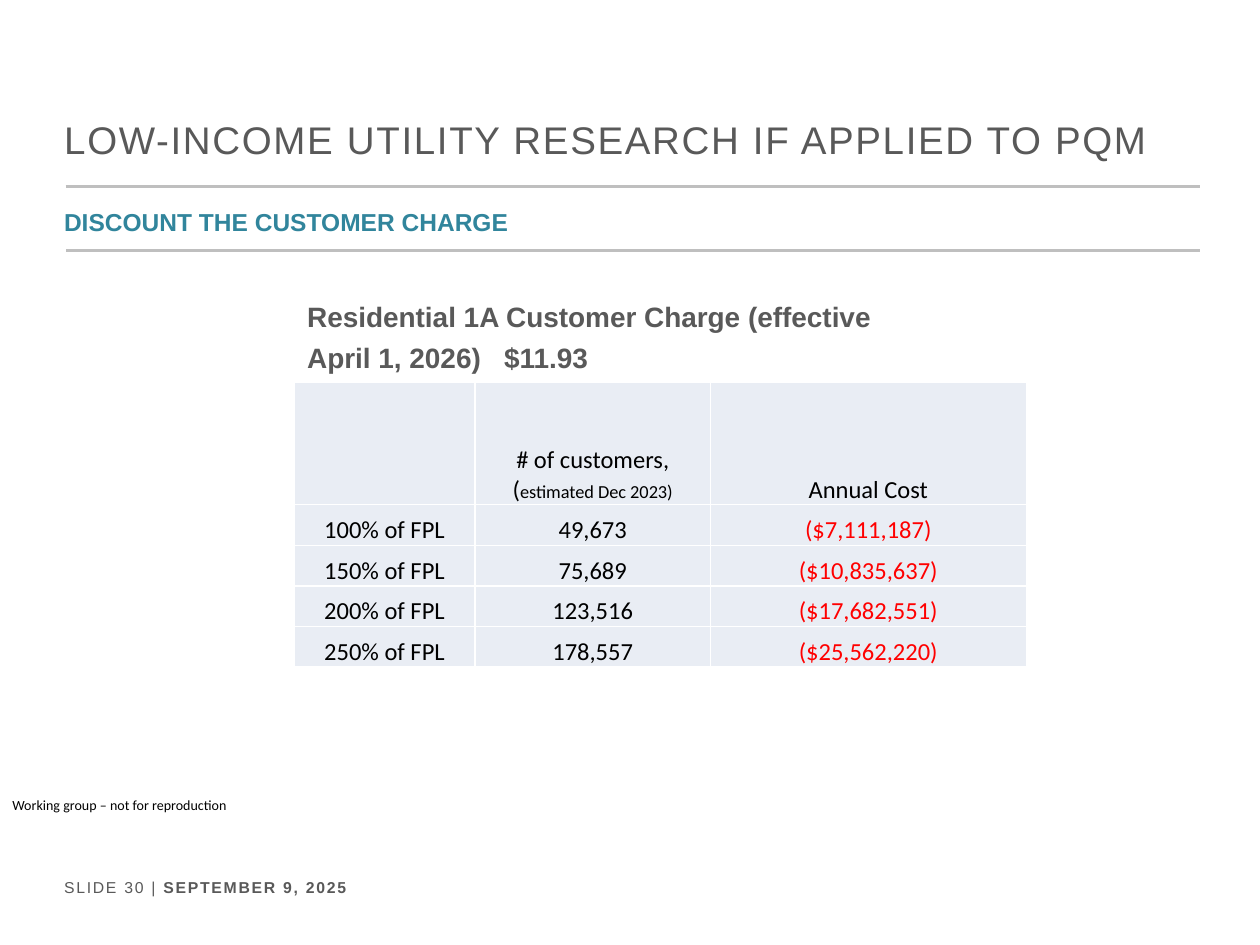
"""Build a slide on the cost of discounting the customer charge."""
from dataclasses import dataclass

from lxml.etree import SubElement
from pptx import Presentation
from pptx.dml.color import RGBColor
from pptx.enum.shapes import MSO_CONNECTOR
from pptx.enum.text import MSO_ANCHOR, MSO_AUTO_SIZE, PP_ALIGN
from pptx.oxml.ns import qn
from pptx.util import Pt

LINE = MSO_CONNECTOR.STRAIGHT
TOP, MIDDLE, BOTTOM = MSO_ANCHOR.TOP, MSO_ANCHOR.MIDDLE, MSO_ANCHOR.BOTTOM
NO_FIT = MSO_AUTO_SIZE.NONE
LEFT, CENTER = PP_ALIGN.LEFT, PP_ALIGN.CENTER

GRAY = RGBColor(0x59, 0x59, 0x59)
RULE = RGBColor(0xBF, 0xBF, 0xBF)
TEAL = RGBColor(0x31, 0x85, 0x9C)
BLACK = RGBColor(0, 0, 0)
RED = RGBColor(0xFF, 0, 0)
PALE = RGBColor(0xE9, 0xED, 0xF4)

HEADS = ["", "# of customers, (", "Annual Cost"]
ROWS = [
    ["100% of FPL", "49,673", "($7,111,187)"],
    ["150% of FPL", "75,689", "($10,835,637)"],
    ["200% of FPL", "123,516", "($17,682,551)"],
    ["250% of FPL", "178,557", "($25,562,220)"],
]
WIDTHS = [103.5, 134.5, 180.5]
HEAD, ROW = 70, 23.2


@dataclass
class Label:
    text: str
    left: float
    top: float
    width: float
    height: float
    size: float
    color: RGBColor = GRAY
    face: str = "Arial"
    bold: bool = False
    anchor: MSO_ANCHOR = TOP
    space: float = 1


TITLE = Label("LOW-INCOME UTILITY RESEARCH IF APPLIED TO PQM",
              29.5, 58.3, 656, 42, 22, anchor=MIDDLE)
FOOT = Label("SLIDE 30 | ", 29.5, 498.2, 193, 18, 9)
LABELS = [
    Label("DISCOUNT THE CUSTOMER CHARGE", 29.5, 108, 655, 34, 14,
          TEAL, bold=True, anchor=MIDDLE, space=1.2),
    Label("Residential 1A Customer Charge (effective April 1, 2026)\t$11.93",
          168.5, 164, 366, 54, 16, bold=True, space=1.2),
    Label("Working group – not for reproduction", 0, 451.4, 138, 17, 8,
          BLACK, "Calibri"),
]


def style(para, face: str, size: float, color: RGBColor, bold: bool = False) -> None:
    font = para.font
    font.name, font.size, font.bold = face, Pt(size), bold
    font.color.rgb = color


def write(shape, label: Label):
    shape.left, shape.top = Pt(label.left), Pt(label.top)
    shape.width, shape.height = Pt(label.width), Pt(label.height)
    frame = shape.text_frame
    frame.word_wrap, frame.auto_size = True, NO_FIT
    frame.vertical_anchor = label.anchor
    para = frame.paragraphs[0]
    para.add_run().text = label.text
    para.alignment, para.line_spacing = LEFT, label.space
    if "\t" in label.text:
        tabs = SubElement(para._p.get_or_add_pPr(), qn("a:tabLst"))
        SubElement(tabs, qn("a:tab"), pos=str(Pt(112.5)), algn="l")
    style(para, label.face, label.size, label.color, label.bold)
    return para


def add_label(slide, label: Label):
    return write(slide.shapes.add_textbox(0, 0, 0, 0), label)


def track(para) -> None:
    for run in para.runs:
        run.font._element.set("spc", "100")


def add_rule(slide, left: float, top: float) -> None:
    rule = slide.shapes.add_connector(LINE, Pt(left), Pt(top), Pt(left + 648), Pt(top))
    rule.line.color.rgb, rule.line.width = RULE, Pt(1.5)
    SubElement(rule._element.spPr, qn("a:effectLst"))


def add_edges(cell) -> None:
    props = cell._tc.get_or_add_tcPr()
    for place, side in enumerate(("lnL", "lnR", "lnT", "lnB")):
        edge = SubElement(props, qn(f"a:{side}"), w=str(Pt(1)))
        SubElement(SubElement(edge, qn("a:solidFill")), qn("a:srgbClr"), val="FFFFFF")
        props.insert(place, edge)


def fill_cell(cell, text: str, color: RGBColor) -> None:
    cell.fill.solid()
    cell.fill.fore_color.rgb = PALE
    add_edges(cell)
    cell.vertical_anchor = BOTTOM
    cell.margin_left = cell.margin_right = cell.margin_top = Pt(0.7)
    cell.margin_bottom = 0
    para = cell.text_frame.paragraphs[0]
    para.alignment = CENTER
    if text:
        para.add_run().text = text
    style(para, "Calibri", 14, color)


def add_grid(slide) -> None:
    data = [HEADS, *ROWS]
    frame = slide.shapes.add_table(len(data), len(HEADS), Pt(168), Pt(218.4),
                                   Pt(sum(WIDTHS)), Pt(HEAD + ROW * len(ROWS)))
    grid = frame.table
    grid.first_row = grid.horz_banding = False
    for col, width in zip(grid.columns, WIDTHS):
        col.width = Pt(width)
    for r, texts in enumerate(data):
        grid.rows[r].height = Pt(ROW if r else HEAD)
        for c, text in enumerate(texts):
            fill_cell(grid.cell(r, c), text, RED if r and c == 2 else BLACK)
    note = grid.cell(0, 1).text_frame.paragraphs[0].add_run()
    note.text, note.font.size = "estimated Dec 2023)", Pt(10.5)


def main() -> None:
    deck = Presentation()
    deck.slide_width, deck.slide_height = Pt(720), Pt(540)
    slide = deck.slides.add_slide(deck.slide_layouts[5])
    add_rule(slide, 37.5, 106.5)
    add_rule(slide, 38, 143.3)
    foot = add_label(slide, FOOT)
    date = foot.add_run()
    date.text, date.font.bold = "SEPTEMBER 9, 2025", True
    track(foot)
    track(write(slide.shapes.title, TITLE))
    for label in LABELS:
        add_label(slide, label)
    add_grid(slide)
    deck.save("out.pptx")


if __name__ == "__main__":
    main()
